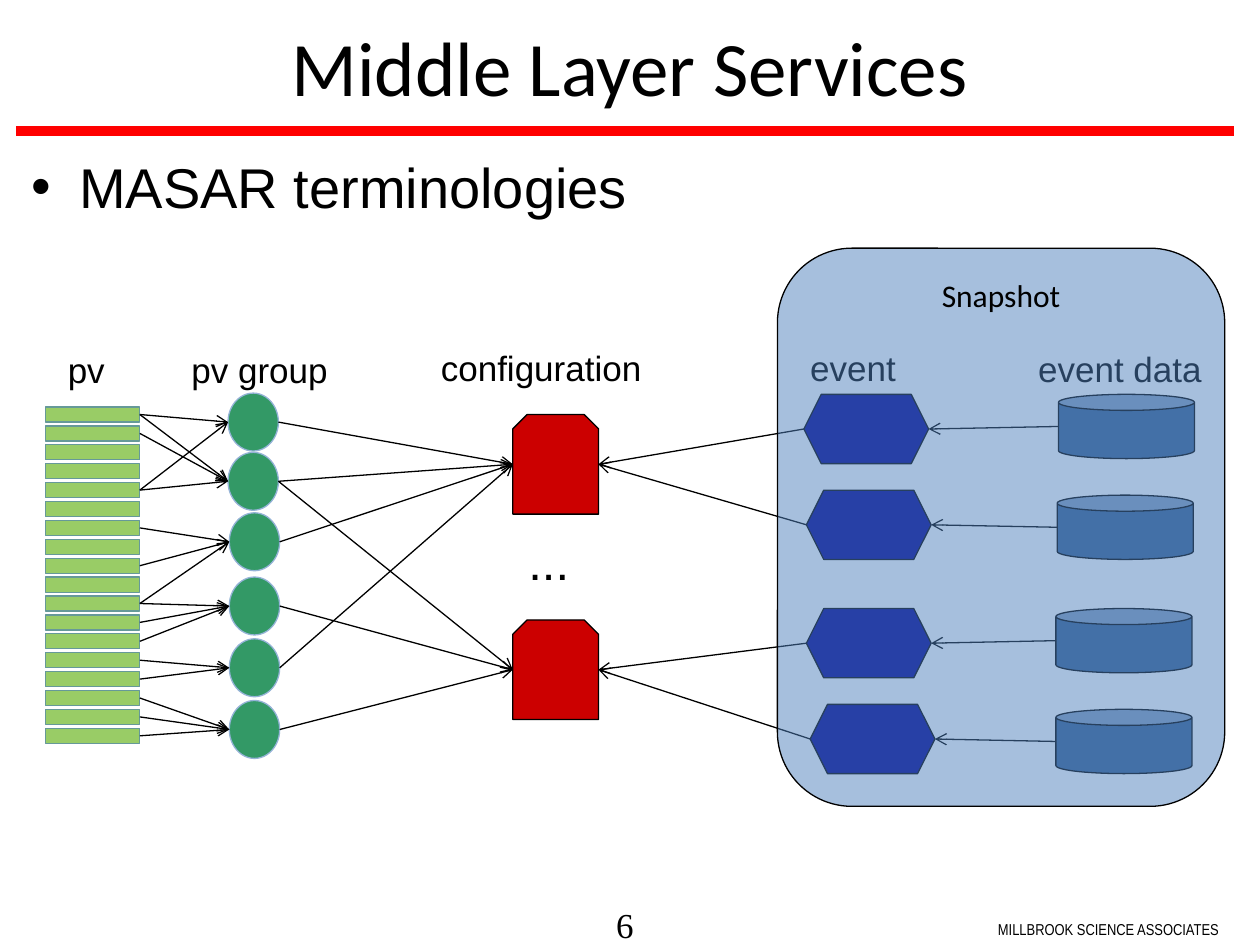
from lxml.etree import SubElement
from pptx import Presentation
from pptx.dml.color import RGBColor
from pptx.enum.shapes import MSO_CONNECTOR, MSO_SHAPE as Shape
from pptx.enum.text import MSO_ANCHOR as Anchor, PP_ALIGN as Align
from pptx.oxml.ns import qn
from pptx.util import Inches, Pt

BLACK = "000000"
PV_LINKS = [(0, 0), (0, 1), (1, 1), (4, 0), (4, 1), (6, 2), (8, 2), (10, 2),
            (10, 3), (11, 3), (12, 3), (13, 4), (14, 4), (15, 5), (16, 5), (17, 5)]
GROUP_LINKS = [(0, 0), (1, 0), (2, 0), (4, 0), (1, 1), (3, 1), (5, 1)]
EVENT_LINKS = [(0, 0), (1, 0), (2, 1), (3, 1)]
DATA_LINKS = [(row, row) for row in range(4)]


def rgb(code):
    return RGBColor.from_string(code)


def style_text(frame, words, size, font, align):
    frame.text = words
    frame.word_wrap = True
    paragraph = frame.paragraphs[0]
    paragraph.alignment = align
    for run in paragraph.runs:
        run.font.size = Pt(size)
        run.font.name = font
        run.font.color.rgb = rgb(BLACK)


def add_label(slide, box, words, size=20, font="Arial", align=Align.CENTER,
              anchor=Anchor.TOP, insets=(0.1, 0.05)):
    frame = slide.shapes.add_textbox(*map(Inches, box)).text_frame
    frame.margin_left = frame.margin_right = Inches(insets[0])
    frame.margin_top = frame.margin_bottom = Inches(insets[1])
    frame.vertical_anchor = anchor
    style_text(frame, words, size, font, align)
    return frame


def add_bullet(paragraph, indent):
    properties = paragraph._p.get_or_add_pPr()
    properties.set("marL", str(Inches(indent)))
    properties.set("indent", str(-Inches(indent)))
    SubElement(properties, qn("a:buFont"), typeface="Arial")
    SubElement(properties, qn("a:buChar"), char="•")


def add_node(slide, kind, box, fill, outline=BLACK):
    node = slide.shapes.add_shape(kind, *map(Inches, box))
    node.shadow.inherit = False
    node.fill.solid()
    node.fill.fore_color.rgb = rgb(fill)
    node.line.color.rgb = rgb(outline)
    node.line.width = Pt(0.75)
    return node


def add_column(slide, kind, corners, size, fill, outline=BLACK):
    return [add_node(slide, kind, (*corner, *size), fill, outline)
            for corner in corners]


def add_line(slide, start, end, color=BLACK, width=0.75):
    line = slide.shapes.add_connector(MSO_CONNECTOR.STRAIGHT, *start, *end)
    line.line.color.rgb = rgb(color)
    line.line.width = Pt(width)
    SubElement(line._element.spPr, qn("a:effectLst"))
    return line


def side(node, right):
    return node.left + (node.width if right else 0), node.top + node.height // 2


def add_arrows(slide, sources, targets, links, rightward=True):
    for source, target in links:
        arrow = add_line(slide, side(sources[source], rightward),
                         side(targets[target], not rightward))
        SubElement(arrow.line._get_or_add_ln(), qn("a:tailEnd"), type="arrow")


def add_frame(slide):
    add_line(slide, (Inches(0.13), Inches(1.04)), (Inches(9.79), Inches(1.04)),
             "FF0000", 6)
    add_label(slide, (4.89, 7.17, 0.43, 0.33), "6", 20, "Times New Roman",
              Align.LEFT, insets=(0, 0))
    add_label(slide, (7.92, 7.25, 1.92, 0.25), "MILLBROOK SCIENCE ASSOCIATES", 9,
              "Arial Narrow", Align.LEFT, insets=(0, 0.05))
    add_label(slide, (0, 0, 10, 1.04), "Middle Layer Services", 44, "Calibri",
              anchor=Anchor.MIDDLE)
    topic = add_label(slide, (0.15, 1.16, 9.42, 0.99), "MASAR terminologies", 32,
                      align=Align.LEFT)
    add_bullet(topic.paragraphs[0], 0.38)


def add_diagram(slide):
    configurations = add_column(slide, Shape.SNIP_2_SAME_RECTANGLE,
                                [(4.07, 3.29), (4.07, 4.92)], (0.68, 0.79), "CC0000")
    events = add_column(slide, Shape.HEXAGON,
                        [(6.38, 3.13), (6.4, 3.89), (6.4, 4.83), (6.43, 5.59)],
                        (0.99, 0.55), "000090")
    event_data = add_column(slide, Shape.CAN,
                            [(8.4, 3.13), (8.39, 3.93), (8.38, 4.83), (8.38, 5.63)],
                            (1.08, 0.51), "376092")
    pvs = add_column(slide, Shape.RECTANGLE,
                     [(0.36, 3.23 + 0.15 * row) for row in range(18)],
                     (0.75, 0.12), "99CC66", "669999")
    groups = add_column(slide, Shape.OVAL,
                        [(1.81, 3.12), (1.81, 3.59), (1.82, 4.07),
                         (1.82, 4.58), (1.82, 5.07), (1.82, 5.56)],
                        (0.4, 0.46), "339966", "95B3D7")

    add_arrows(slide, pvs, groups, PV_LINKS)
    add_arrows(slide, groups, configurations, GROUP_LINKS)
    add_arrows(slide, events, configurations, EVENT_LINKS, rightward=False)
    add_arrows(slide, event_data, events, DATA_LINKS, rightward=False)

    add_label(slide, (0.21, 2.72, 0.95, 0.39), "pv")
    add_label(slide, (1.4, 2.72, 1.32, 0.39), "pv group")
    add_label(slide, (3.4, 2.7, 1.81, 0.39), "configuration", align=Align.LEFT)
    add_label(slide, (3.98, 4.17, 0.75, 0.52), "...", 28)
    add_label(slide, (6.11, 2.7, 1.32, 0.4), "event")
    add_label(slide, (8.14, 2.71, 1.52, 0.39), "event data", align=Align.LEFT)


def add_snapshot(slide):
    snapshot = add_node(slide, Shape.ROUNDED_RECTANGLE, (6.17, 1.97, 3.55, 4.43),
                        "4F81BD")
    tint = snapshot._element.spPr.find(qn("a:solidFill"))[0]
    SubElement(tint, qn("a:alpha"), val="50000")
    snapshot.text_frame.vertical_anchor = Anchor.TOP
    style_text(snapshot.text_frame, "Snapshot", 18, "Calibri", Align.CENTER)


def main():
    deck = Presentation()
    deck.slide_width, deck.slide_height = Inches(10), Inches(7.5)
    slide = deck.slides.add_slide(deck.slide_layouts[6])
    add_frame(slide)
    add_diagram(slide)
    add_snapshot(slide)
    deck.save("out.pptx")


if __name__ == "__main__":
    main()
